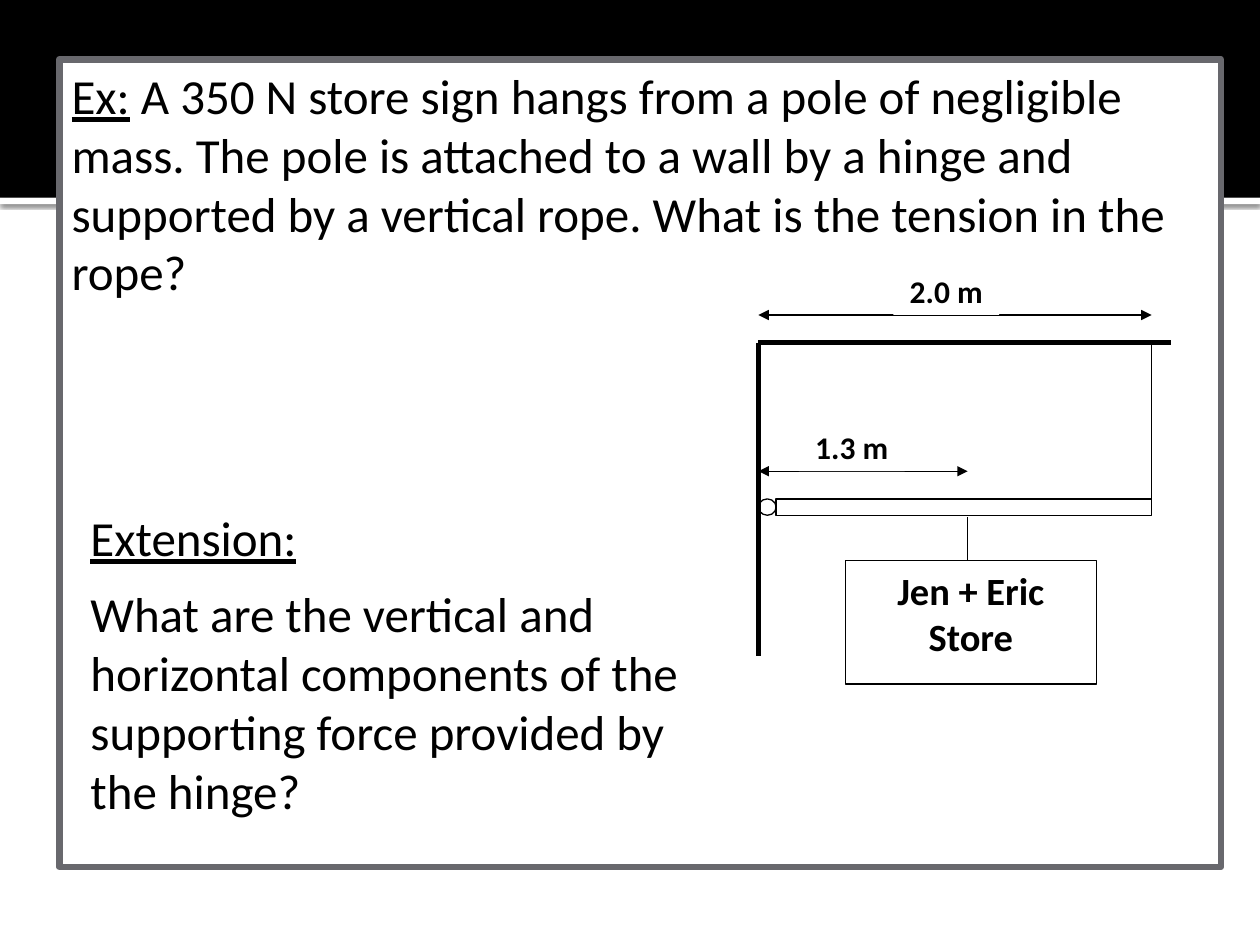
"""Build a physics example slide about a store sign hanging from a pole."""
import pptx
import pptx.dml.color
import pptx.enum.shapes
import pptx.enum.text
import pptx.oxml
import pptx.oxml.ns
import pptx.util
from pptx.util import Inches

BLACK = pptx.dml.color.RGBColor(0x00, 0x00, 0x00)
WHITE = pptx.dml.color.RGBColor(0xFF, 0xFF, 0xFF)
GREY = pptx.dml.color.RGBColor(0x68, 0x68, 0x6D)
RECT = pptx.enum.shapes.MSO_SHAPE.RECTANGLE
OVAL = pptx.enum.shapes.MSO_SHAPE.OVAL
LEFT = pptx.enum.text.PP_ALIGN.LEFT
CENTER = pptx.enum.text.PP_ALIGN.CENTER
NS = pptx.oxml.ns.nsdecls("a")

prs = pptx.Presentation()
prs.slide_width, prs.slide_height = Inches(10), Inches(7.5)
s = prs.slides.add_slide(prs.slide_layouts[6])


def add_box(kind, x, y, w, h, fill=WHITE, line=None, width=0.75):
    sp = s.shapes.add_shape(kind, Inches(x), Inches(y), Inches(w), Inches(h))
    sp.shadow.inherit = False
    sp.fill.solid()
    sp.fill.fore_color.rgb = fill
    if line is None:
        sp.line.fill.background()
    else:
        sp.line.color.rgb = line
        sp.line.width = pptx.util.Pt(width)
    return sp


def write(sp, paragraphs, size, align=LEFT, bold=False):
    tf = sp.text_frame
    tf.word_wrap = True
    tf.vertical_anchor = pptx.enum.text.MSO_ANCHOR.TOP
    for i, runs in enumerate(paragraphs):
        p = tf.paragraphs[0] if i == 0 else tf.add_paragraph()
        p.alignment = align
        p.space_after = pptx.util.Pt(10)
        for text, underline in runs:
            r = p.add_run()
            r.text = text
            r.font.name = "Calibri"
            r.font.size = pptx.util.Pt(size)
            r.font.bold = bold
            r.font.underline = underline
            r.font.color.rgb = BLACK


strip = add_box(RECT, 0, 1.57, 10, 0.05)
effects = strip._element.spPr.find(pptx.oxml.ns.qn("a:effectLst"))
effects.append(pptx.oxml.parse_xml(
    f'<a:outerShdw {NS} blurRad="31750" dist="10160" dir="5400000" rotWithShape="0">'
    '<a:srgbClr val="000000"><a:alpha val="60000"/></a:srgbClr></a:outerShdw>'))
add_box(RECT, 0, 0, 10, 1.57, BLACK)

panel = add_box(RECT, 0.47, 0.47, 9.22, 6.41, WHITE, GREY, 3.78)
panel.line._get_or_add_ln().append(pptx.oxml.parse_xml(f"<a:round {NS}/>"))
write(panel, [[
    ("Ex:", True),
    (" A 350 N store sign hangs from a pole of negligible mass. The pole is attached "
     "to a wall by a hinge and supported by a vertical rope. What is the tension in "
     "the rope?", False)]], 28)

wall_x, rope_x, sign_x = 6.02, 9.14, 7.68
ceiling_y, pole_y = 2.72, 3.96
add_box(OVAL, wall_x, pole_y, 0.14, 0.13, WHITE, BLACK)
add_box(RECT, 6.16, pole_y, 2.98, 0.13, WHITE, BLACK)
sign = add_box(RECT, 6.71, 4.45, 1.99, 0.98, WHITE, BLACK)
write(sign, [[("Jen + Eric Store", False)]], 22, CENTER, True)

for x1, y1, x2, y2, width, arrows in [
    (wall_x, ceiling_y, wall_x, 5.21, 3, False),
    (9.29, ceiling_y, wall_x, ceiling_y, 3, False),
    (rope_x, ceiling_y, rope_x, pole_y, 0.75, False),
    (sign_x, 4.45, sign_x, 4.1, 0.75, False),
    (wall_x, 2.5, rope_x, 2.5, 0.75, True),
    (wall_x, 3.74, sign_x, 3.74, 0.75, True),
]:
    line = s.shapes.add_connector(pptx.enum.shapes.MSO_CONNECTOR.STRAIGHT,
                                  Inches(x1), Inches(y1), Inches(x2), Inches(y2))
    line.line.color.rgb = BLACK
    line.line.width = pptx.util.Pt(width)
    line._element.spPr.append(pptx.oxml.parse_xml(f"<a:effectLst {NS}/>"))
    if arrows:
        for end in ("headEnd", "tailEnd"):
            line.line._get_or_add_ln().append(
                pptx.oxml.parse_xml(f'<a:{end} {NS} type="triangle"/>'))

for text, x, y in [("1.3 m", 6.34, 3.35), ("2.0 m", 7.09, 2.11)]:
    label = add_box(RECT, x, y, 0.84, 0.39)
    write(label, [[(text, False)]], 18, CENTER, True)

extension = s.shapes.add_textbox(Inches(0.62), Inches(3.98), Inches(5.16), Inches(2.27))
write(extension, [
    [("Extension:", True)],
    [("What are the vertical and horizontal components of the supporting force "
      "provided by the hinge?", False)]], 28)

prs.save("out.pptx")
